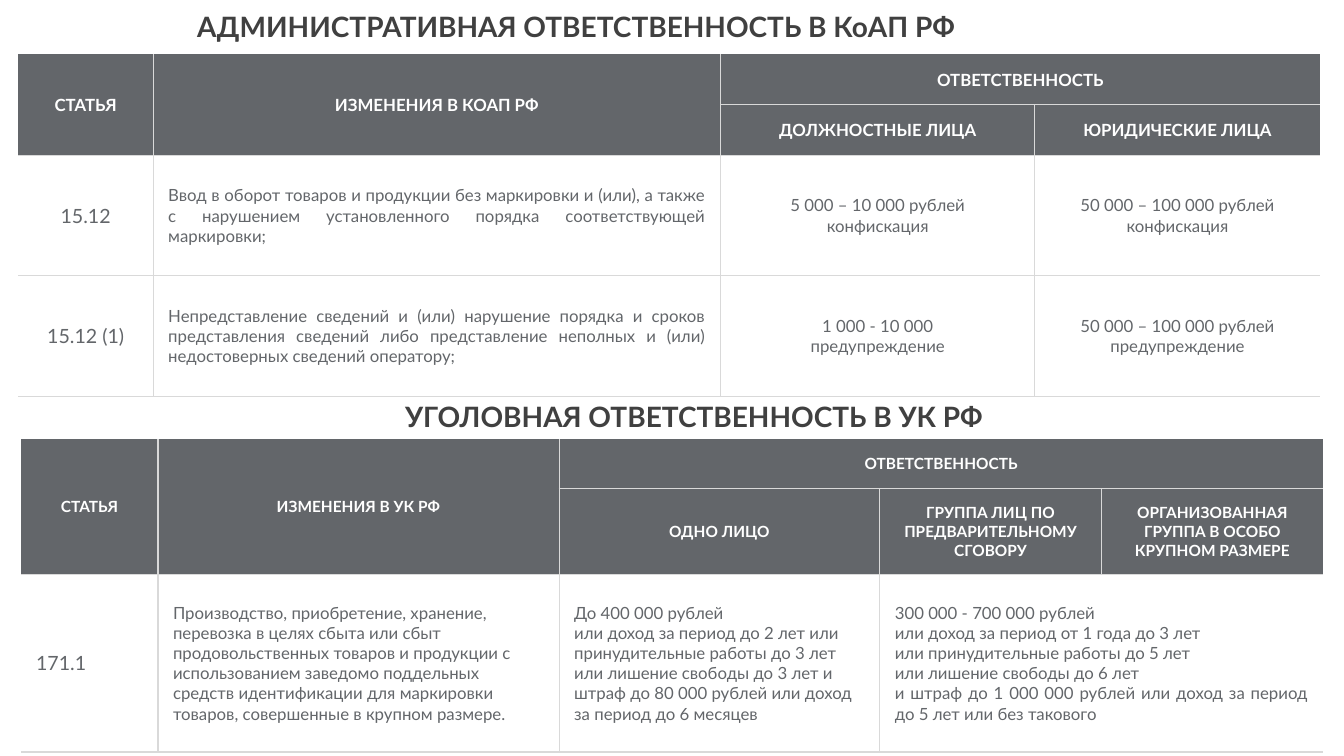
from lxml.etree import SubElement
from pptx import Presentation
from pptx.dml.color import RGBColor
from pptx.enum.text import MSO_ANCHOR, MSO_AUTO_SIZE, PP_ALIGN
from pptx.oxml.ns import qn
from pptx.util import Cm, Pt

FONT = "Lato"
GREY, TITLE, RULE, WHITE = "63666A", "404040", "D9D9D9", "FFFFFF"
LEFT, CENTER, JUSTIFY = PP_ALIGN.LEFT, PP_ALIGN.CENTER, PP_ALIGN.JUSTIFY
PLAIN_STYLE = "{2D5ABB26-0587-4C30-8999-92F81FD0307C}"
INSET = Cm(0.38)


def color(value):
    return RGBColor.from_string(value)


def write(frame, text, size=12, ink=GREY, bold=False, align=LEFT, spacing=None):
    """Fill a text frame, one paragraph per line of text."""
    frame.word_wrap = True
    for index, line in enumerate(text.split("\n")):
        paragraph = frame.add_paragraph() if index else frame.paragraphs[0]
        paragraph.alignment = align
        paragraph.line_spacing = spacing
        run = paragraph.add_run()
        run.text = line
        run.font.name = FONT
        run.font.size = Pt(size)
        run.font.bold = bold
        run.font.color.rgb = color(ink)


def add_title(slide, text, left, top):
    box = slide.shapes.add_textbox(Cm(left), Cm(top), Cm(26.21), Cm(0.94))
    write(box.text_frame, text, size=20, ink=TITLE, bold=True, align=CENTER, spacing=0.8)
    box.text_frame.auto_size = MSO_AUTO_SIZE.SHAPE_TO_FIT_TEXT


def draw_borders(cell, sides):
    """Rule the given sides, named in schema order out of L, R, T, B."""
    properties = cell._tc.get_or_add_tcPr()
    for side in sides:
        line = SubElement(properties, qn(f"a:ln{side}"), w=str(Pt(1)))
        fill = SubElement(line, qn("a:solidFill"))
        SubElement(fill, qn("a:srgbClr"), val=RULE)


def format_cell(cell, sides, is_header):
    draw_borders(cell, sides)
    if is_header:
        cell.fill.solid()
        cell.fill.fore_color.rgb = color(GREY)
    else:
        cell.fill.background()
    cell.vertical_anchor = MSO_ANCHOR.MIDDLE
    cell.margin_left = cell.margin_right = INSET
    cell.margin_top = cell.margin_bottom = INSET


def add_grid(slide, left, top, widths, heights, merges):
    """Add a table with two header rows and rules between its cells."""
    frame = slide.shapes.add_table(len(heights), len(widths), Cm(left), Cm(top),
                                   Cm(sum(widths)), Cm(sum(heights)))
    table = frame.table
    table.first_row = table.horz_banding = False
    table._tbl.tblPr.find(qn("a:tableStyleId")).text = PLAIN_STYLE
    for column, width in zip(table.columns, widths):
        column.width = Cm(width)
    for row, height in zip(table.rows, heights):
        row.height = Cm(height)
    for first, last in merges:
        table.cell(*first).merge(table.cell(*last))
    for r in range(len(heights)):
        for c in range(len(widths)):
            cell = table.cell(r, c)
            span = cell.span_width if cell.is_merge_origin else 1
            sides = "" if cell.is_spanned else (
                "L" * (c > 0) + "R" * (c + span < len(widths)) + "T" * (r > 0) + "B")
            format_cell(cell, sides, is_header=r < 2)
    return table


def write_headers(table, headers, size):
    for (row, column), text in headers.items():
        write(table.cell(row, column).text_frame, text, size=size, ink=WHITE,
              bold=True, align=CENTER)


def write_row(table, row, texts, aligns):
    """Write a body row; the article number in front is larger."""
    for column, (text, align) in enumerate(zip(texts, aligns)):
        write(table.cell(row, column).text_frame, text,
              size=12 if column else 14, align=align)


def add_administrative_table(slide):
    table = add_grid(slide, 0.46, 1.37, [3.4, 14.3, 7.92, 7.19],
                     [1.27, 1.27, 3.04, 3.04],
                     [((0, 0), (1, 0)), ((0, 1), (1, 1)), ((0, 2), (0, 3))])
    write_headers(table, {
        (0, 0): "СТАТЬЯ",
        (0, 1): "ИЗМЕНЕНИЯ В КОАП РФ",
        (0, 2): "ОТВЕТСТВЕННОСТЬ",
        (1, 2): "ДОЛЖНОСТНЫЕ ЛИЦА",
        (1, 3): "ЮРИДИЧЕСКИЕ ЛИЦА",
    }, size=12)
    articles = [
        ("15.12",
         "Ввод в оборот товаров и продукции без маркировки и (или), а также "
         "с нарушением установленного порядка соответствующей маркировки;",
         "5 000 – 10 000 рублей\nконфискация",
         "50 000 – 100 000 рублей\nконфискация"),
        ("15.12 (1)",
         "Непредставление сведений и (или) нарушение порядка и сроков "
         "представления сведений либо представление неполных и (или) "
         "недостоверных сведений оператору;",
         "1 000 - 10 000\nпредупреждение",
         "50 000 – 100 000 рублей\nпредупреждение"),
    ]
    for row, article in enumerate(articles, start=2):
        write_row(table, row, article, [CENTER, JUSTIFY, CENTER, CENTER])


def add_criminal_table(slide):
    table = add_grid(slide, 0.53, 11.07, [3.45, 10.11, 8.08, 5.59, 5.59],
                     [1.24, 2.14, 4.48],
                     [((0, 0), (1, 0)), ((0, 1), (1, 1)), ((0, 2), (0, 4)),
                      ((2, 3), (2, 4))])
    write_headers(table, {
        (0, 0): "СТАТЬЯ",
        (0, 1): "ИЗМЕНЕНИЯ В УК РФ",
        (0, 2): "ОТВЕТСТВЕННОСТЬ",
        (1, 2): "ОДНО ЛИЦО",
        (1, 3): "ГРУППА ЛИЦ ПО ПРЕДВАРИТЕЛЬНОМУ СГОВОРУ",
        (1, 4): "ОРГАНИЗОВАННАЯ ГРУППА В ОСОБО КРУПНОМ РАЗМЕРЕ",
    }, size=11)
    write_row(table, 2, [
        "171.1",
        "Производство, приобретение, хранение, перевозка в целях сбыта или сбыт "
        "продовольственных товаров и продукции с использованием заведомо "
        "поддельных средств идентификации для маркировки товаров, совершенные "
        "в крупном размере.",
        "До 400 000 рублей\n"
        "или доход за период до 2 лет или принудительные работы до 3 лет "
        "или лишение свободы до 3 лет и штраф до 80 000 рублей или доход "
        "за период до 6 месяцев",
        "300 000 - 700 000 рублей\n"
        "или доход за период от 1 года до 3 лет\n"
        "или принудительные работы до 5 лет\n"
        "или лишение свободы до 6 лет\n"
        "и штраф до 1 000 000 рублей или доход за период до 5 лет "
        "или без такового",
    ], [LEFT, LEFT, LEFT, JUSTIFY])


def main():
    deck = Presentation()
    deck.slide_width, deck.slide_height = Cm(33.87), Cm(19.05)
    slide = deck.slides.add_slide(deck.slide_layouts[6])
    add_administrative_table(slide)
    add_title(slide, "АДМИНИСТРАТИВНАЯ ОТВЕТСТВЕННОСТЬ В КоАП РФ", 1.42, 0.28)
    add_title(slide, "УГОЛОВНАЯ ОТВЕТСТВЕННОСТЬ В УК РФ", 4.39, 10.11)
    add_criminal_table(slide)
    deck.save("out.pptx")


if __name__ == "__main__":
    main()
